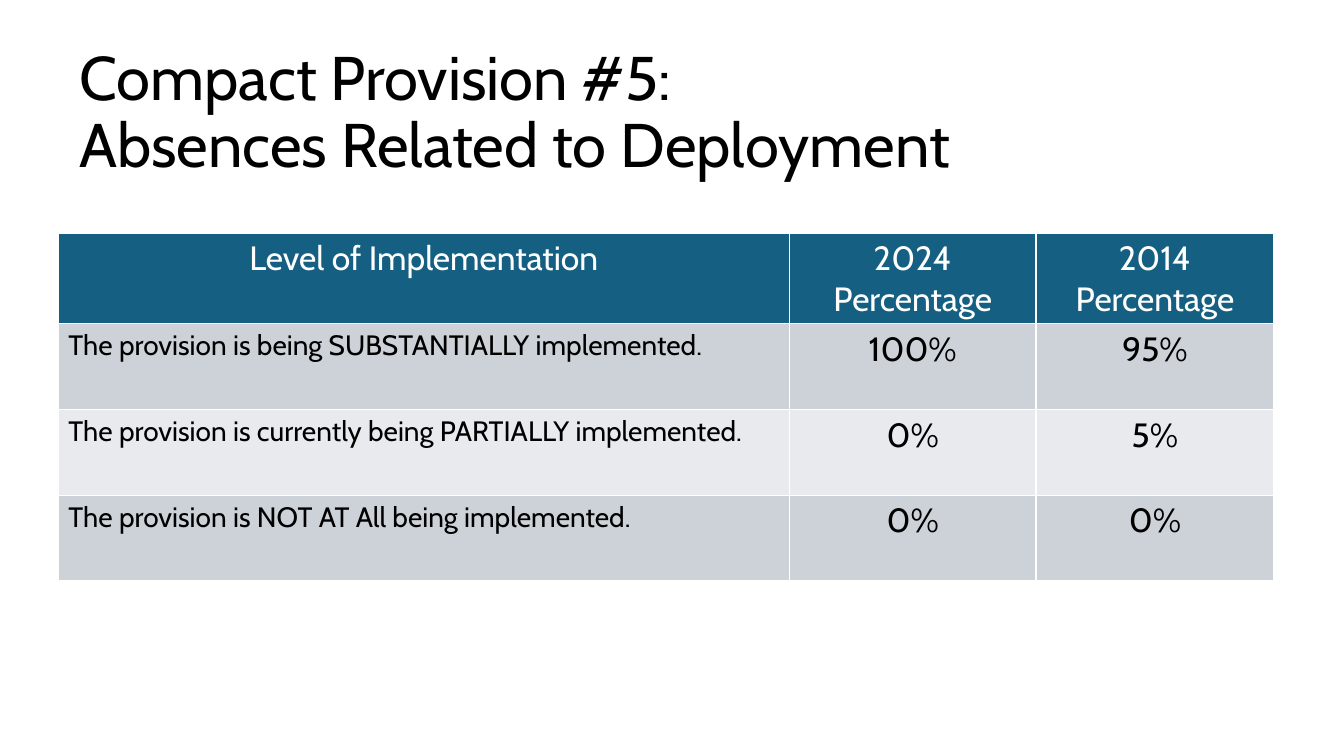
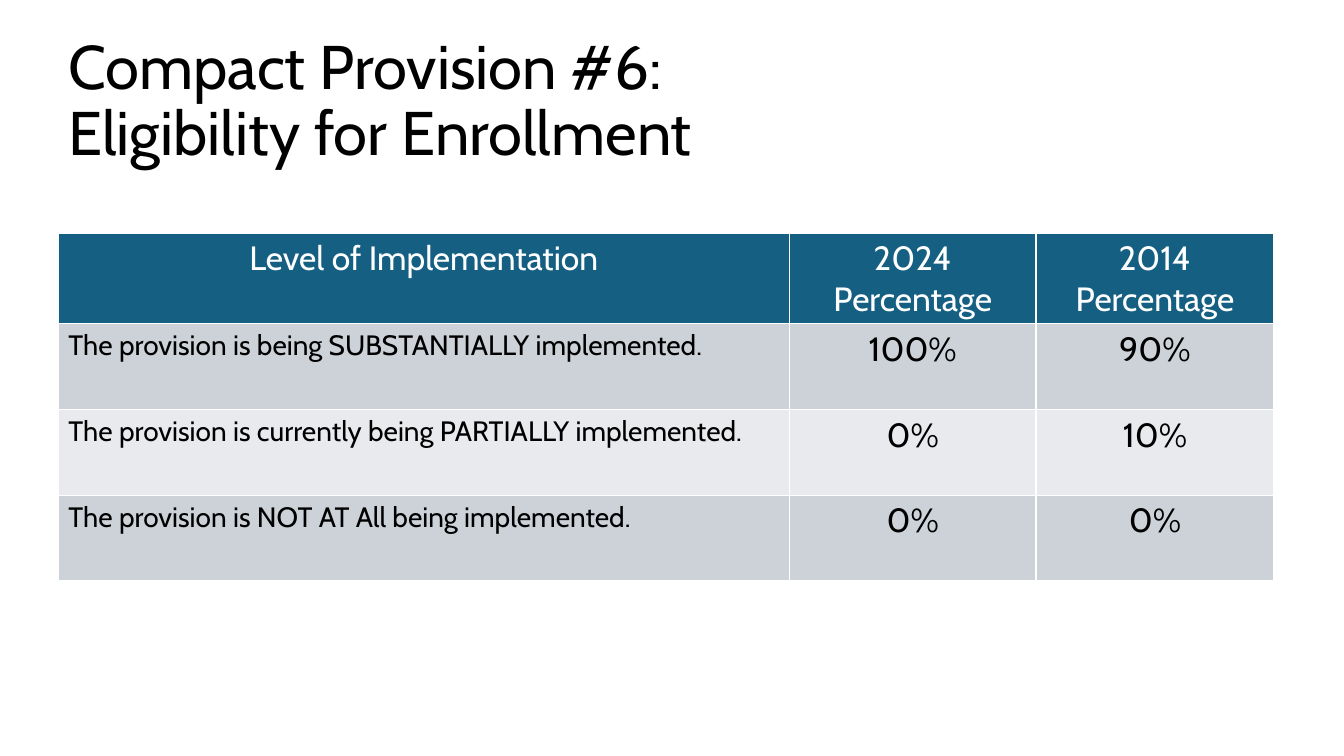
from pptx import Presentation
from pptx.dml.color import RGBColor
from pptx.enum import text
from pptx.util import Cm, Pt

FONT = "Cabin"
COLORS = {
    "ink": "000000",
    "white": "FFFFFF",
    "header": "156082",
    "band_dark": "CCD2D8",
    "band_light": "E8EAED",
}

# Table wording and geometry shared by the slides (centimetres)
HEADERS = ["Level of Implementation", "2024 Percentage", "2014 Percentage"]
LEVELS = [
    "The provision is being SUBSTANTIALLY implemented.",
    "The provision is currently being PARTIALLY implemented.",
    "The provision is NOT AT All being implemented.",
]
TABLE_LEFT, TABLE_TOP = 1.47, 5.87
COLUMN_WIDTHS = [18.42, 6.22, 5.99]
ROW_HEIGHTS = [2.29] + [2.16] * len(LEVELS)

# Title lines, title position, and percentages for 2024 and 2014
PROVISIONS = [
    (["Compact Provision #5:", "Absences Related to Deployment"], (1.75, 1.04),
     [("100%", "95%"), ("0%", "5%"), ("0%", "0%")]),
    (["Compact Provision #6:", "Eligibility for Enrollment"], (1.47, 0.74),
     [("100%", "90%"), ("0%", "10%"), ("0%", "0%")]),
]


def color(name):
    return RGBColor.from_string(COLORS[name])


def write_text(frame, lines, size=24, ink="ink", centered=False, spacing=None):
    """Write lines into one paragraph, separated by line breaks."""
    paragraph = frame.paragraphs[0]
    paragraph.alignment = text.PP_ALIGN.CENTER if centered else text.PP_ALIGN.LEFT
    paragraph.line_spacing = spacing
    for index, line in enumerate(lines):
        if index:
            paragraph.add_line_break()
        run = paragraph.add_run()
        run.text = line
        run.font.name = FONT
        run.font.size = Pt(size)
        run.font.bold = False
        run.font.color.rgb = color(ink)


def add_title(slide, lines, left, top):
    box = slide.shapes.add_textbox(Cm(left), Cm(top), Cm(29.21), Cm(3.68))
    frame = box.text_frame
    frame.word_wrap = True
    frame.vertical_anchor = text.MSO_ANCHOR.MIDDLE
    write_text(frame, lines, size=44, spacing=0.9)


def add_level_table(slide, percentages):
    rows = [HEADERS] + [[level, *values] for level, values in zip(LEVELS, percentages)]
    table = slide.shapes.add_table(
        len(rows), len(HEADERS), Cm(TABLE_LEFT), Cm(TABLE_TOP),
        Cm(sum(COLUMN_WIDTHS)), Cm(sum(ROW_HEIGHTS))).table
    for column, width in zip(table.columns, COLUMN_WIDTHS):
        column.width = Cm(width)
    for row, height in zip(table.rows, ROW_HEIGHTS):
        row.height = Cm(height)

    # The default table style supplies the white grid lines
    for row_index, values in enumerate(rows):
        is_header = row_index == 0
        band = "header" if is_header else "band_dark" if row_index % 2 else "band_light"
        for column_index, value in enumerate(values):
            cell = table.cell(row_index, column_index)
            cell.fill.solid()
            cell.fill.fore_color.rgb = color(band)
            is_level = column_index == 0 and not is_header
            write_text(cell.text_frame, [value], size=20 if is_level else 24,
                       ink="white" if is_header else "ink", centered=not is_level)


def main():
    presentation = Presentation()
    presentation.slide_width, presentation.slide_height = Cm(33.87), Cm(19.05)
    blank_layout = presentation.slide_layouts[6]
    for title_lines, title_position, percentages in PROVISIONS:
        slide = presentation.slides.add_slide(blank_layout)
        add_title(slide, title_lines, *title_position)
        add_level_table(slide, percentages)
    presentation.save("out.pptx")


if __name__ == "__main__":
    main()
